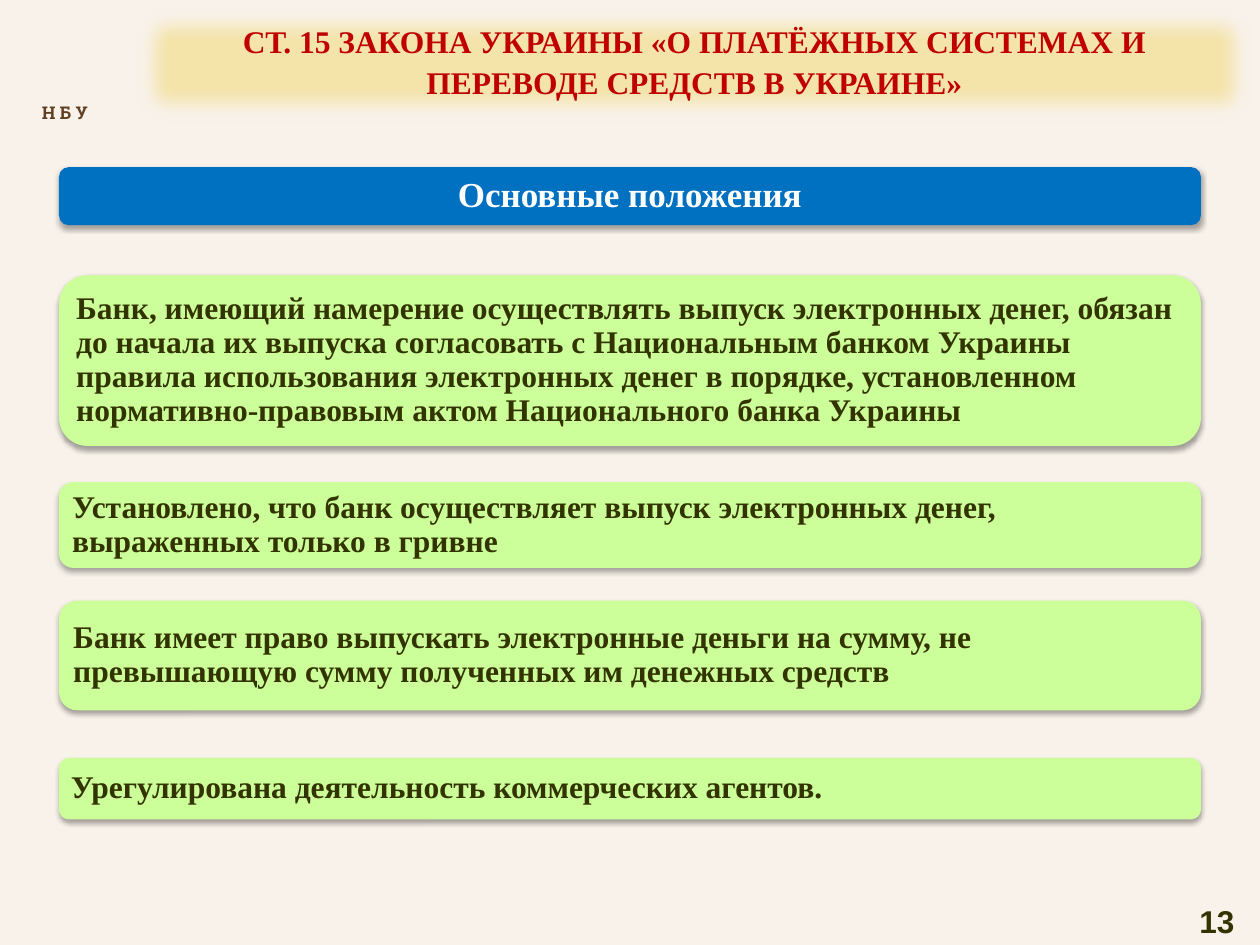
from typing import NamedTuple

from lxml.etree import SubElement
from pptx import Presentation
from pptx.dml.color import RGBColor
from pptx.enum.shapes import MSO_SHAPE
from pptx.enum.text import MSO_ANCHOR, MSO_AUTO_SIZE, PP_ALIGN
from pptx.oxml.ns import qn
from pptx.util import Cm, Pt

CREAM = RGBColor(0xF9, 0xF2, 0xEB)
SAND = RGBColor(0xF4, 0xE4, 0xAA)
BLUE = RGBColor(0x00, 0x70, 0xC0)
GREEN = RGBColor(0xCC, 0xFF, 0x99)
OLIVE = RGBColor(0x33, 0x33, 0x00)
BROWN = RGBColor(0x5F, 0x3F, 0x1F)
RED = RGBColor(0xC0, 0x00, 0x00)
WHITE = RGBColor(0xFF, 0xFF, 0xFF)

SLIDE_WIDTH, SLIDE_HEIGHT = 25.4, 19.05
CARD_LEFT = 1.19
CARD_WIDTH = SLIDE_WIDTH - 2 * CARD_LEFT


class Provision(NamedTuple):
    top: float
    height: float
    text: str


PROVISIONS = [
    Provision(5.55, 3.44, "Банк, имеющий намерение осуществлять выпуск электронных денег, "
              "обязан до начала их выпуска согласовать с Национальным банком Украины "
              "правила использования электронных денег в порядке, установленном "
              "нормативно-правовым актом Национального банка Украины"),
    Provision(9.72, 1.73, "Установлено, что банк осуществляет выпуск электронных денег, "
              "выраженных только в гривне"),
    Provision(12.11, 2.21, "Банк имеет право выпускать электронные деньги на сумму, "
              "не превышающую сумму полученных им денежных средств"),
    Provision(15.28, 1.24, "Урегулирована деятельность коммерческих агентов."),
]


def write(shape, text: str, *, color: RGBColor, size: float = 18,
          font: str = "Times New Roman", align=PP_ALIGN.LEFT,
          anchor=MSO_ANCHOR.TOP, spacing: float = 1.0,
          inset_x: float = 0.25, inset_y: float = 0.13) -> None:
    """Fill a shape with one bold paragraph."""
    frame = shape.text_frame
    frame.word_wrap = True
    frame.auto_size = MSO_AUTO_SIZE.NONE
    frame.vertical_anchor = anchor
    frame.margin_left = frame.margin_right = Cm(inset_x)
    frame.margin_top = frame.margin_bottom = Cm(inset_y)
    paragraph = frame.paragraphs[0]
    paragraph.alignment = align
    paragraph.line_spacing = spacing
    paragraph.space_before = Pt(0)
    run = paragraph.add_run()
    run.text = text
    run.font.name = font
    run.font.size = Pt(size)
    run.font.bold = True
    run.font.color.rgb = color


def add_block(slide, kind, left: float, top: float, width: float, height: float,
              fill: RGBColor):
    block = slide.shapes.add_shape(kind, Cm(left), Cm(top), Cm(width), Cm(height))
    block.fill.solid()
    block.fill.fore_color.rgb = fill
    block.line.fill.background()
    block.shadow.inherit = False
    return block


def add_effect(shape, tag: str, **attributes: str):
    effects = shape._element.spPr.find(qn("a:effectLst"))
    return SubElement(effects, qn(tag), attributes)


def add_card(slide, top: float, height: float, text: str, fill: RGBColor, **style) -> None:
    card = add_block(slide, MSO_SHAPE.ROUNDED_RECTANGLE,
                     CARD_LEFT, top, CARD_WIDTH, height, fill)
    shadow = add_effect(card, "a:outerShdw", blurRad=str(Pt(3.1)), dist=str(Pt(1.8)),
                        dir="5400000", rotWithShape="0")
    black = SubElement(shadow, qn("a:srgbClr"), val="000000")
    SubElement(black, qn("a:alpha"), val="35000")
    write(card, text, anchor=MSO_ANCHOR.MIDDLE, spacing=0.9, **style)


def add_label(slide, left: float, top: float, width: float, height: float,
              text: str, **style) -> None:
    label = slide.shapes.add_textbox(Cm(left), Cm(top), Cm(width), Cm(height))
    write(label, text, **style)


def main() -> None:
    prs = Presentation()
    prs.slide_width, prs.slide_height = Cm(SLIDE_WIDTH), Cm(SLIDE_HEIGHT)
    slide = prs.slides.add_slide(prs.slide_layouts[5])
    slide.background.fill.solid()
    slide.background.fill.fore_color.rgb = CREAM

    # Title on a soft-edged band
    title = slide.shapes.title
    title.left, title.top, title.width, title.height = Cm(3.18), Cm(0.23), Cm(21.64), Cm(1.96)
    write(title, "СТ. 15 ЗАКОНА УКРАИНЫ «О ПЛАТЁЖНЫХ СИСТЕМАХ И ПЕРЕВОДЕ СРЕДСТВ В УКРАИНЕ»",
          color=RED, align=PP_ALIGN.CENTER, spacing=1.1)
    band = add_block(slide, MSO_SHAPE.RECTANGLE, 2.59, 0, SLIDE_WIDTH - 2.59, 2.59, SAND)
    add_effect(band, "a:softEdge", rad=str(Pt(12.5)))
    title._element.addprevious(band._element)

    # Bank abbreviation and page number
    add_label(slide, 0.3, 1.93, 2.01, 0.69, "Н Б У", color=BROWN, size=10,
              font="Roboto Slab", align=PP_ALIGN.CENTER)
    add_label(slide, 23.93, 17.98, 1.47, 1.07, "13", color=OLIVE, font="Arial", spacing=1.1)

    # Heading and provisions
    add_card(slide, 3.37, 1.17, "Основные положения", BLUE, color=WHITE, size=20,
             align=PP_ALIGN.CENTER, inset_x=0.2, inset_y=0.2)
    for provision in PROVISIONS:
        add_card(slide, provision.top, provision.height, provision.text, GREEN,
                 color=OLIVE, inset_x=0.18, inset_y=0.18)

    prs.save("out.pptx")


if __name__ == "__main__":
    main()
